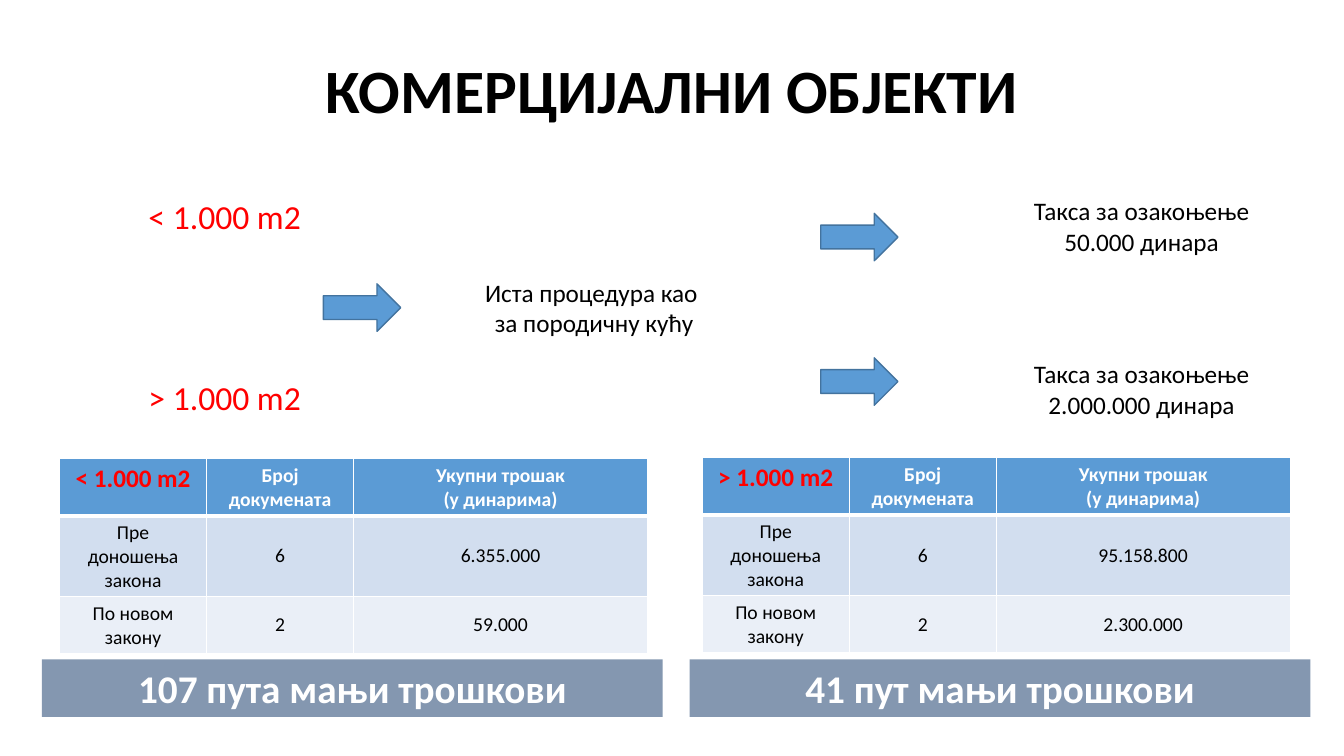
"""Build the slide on legalisation costs of commercial buildings."""
from lxml import etree
from pptx import Presentation
from pptx import util as u
from pptx.dml.color import RGBColor
from pptx.enum import shapes, text
from pptx.oxml.ns import qn

COLUMNS, ROWS = 160, 90
WIDTH, HEIGHT = u.Inches(13.33), u.Inches(7.5)
BLUE, OUTLINE, SLATE = "5B9BD5", "43739E", "8497B0"
BLACK, WHITE, RED = "000000", "FFFFFF", "FF0000"
ROW_FILLS = [BLUE, "D2DEEF", "EAEFF7"]
TABLE_COLUMNS = [17.5, 17.5, 35]
TABLE_ROWS = [6.8, 9.55, 6.8]
CENTER, LEFT = text.PP_ALIGN.CENTER, text.PP_ALIGN.LEFT
MIDDLE, TOP = text.MSO_ANCHOR.MIDDLE, text.MSO_ANCHOR.TOP


def color(hex_code):
    return RGBColor.from_string(hex_code)


def across(columns):
    return round(WIDTH * columns / COLUMNS)


def down(rows):
    return round(HEIGHT * rows / ROWS)


def place(column, row, columns, rows):
    return across(column), down(row), across(columns), down(rows)


def write(frame, lines, size, ink=BLACK, bold=False, align=CENTER):
    for index, line in enumerate(lines):
        paragraph = frame.paragraphs[0] if index == 0 else frame.add_paragraph()
        paragraph.alignment = align
        run = paragraph.add_run()
        run.text = line
        run.font.name = "Calibri"
        run.font.size = u.Pt(size)
        run.font.bold = bold
        run.font.color.rgb = color(ink)


def add_label(slide, area, lines, size, wrap=True, anchor=TOP, **style):
    frame = slide.shapes.add_textbox(*place(*area)).text_frame
    frame.word_wrap = wrap
    frame.vertical_anchor = anchor
    write(frame, lines, size, **style)


def add_block(slide, preset, area, fill):
    block = slide.shapes.add_shape(preset, *place(*area))
    block.shadow.inherit = False
    block.fill.solid()
    block.fill.fore_color.rgb = color(fill)
    return block


def add_arrow(slide, column, row):
    arrow = add_block(slide, shapes.MSO_SHAPE.RIGHT_ARROW, (column, row, 9.2, 5.65), BLUE)
    arrow.line.color.rgb = color(OUTLINE)
    arrow.line.width = u.Pt(1)


def add_saving(slide, column, saving):
    bar = add_block(slide, shapes.MSO_SHAPE.RECTANGLE, (column, 78.5, 73.9, 6.85), SLATE)
    bar.line.fill.background()
    write(bar.text_frame, [saving], 28, WHITE, True)


def set_borders(cell, top, bottom):
    properties = cell._tc.get_or_add_tcPr()
    sides = [("a:lnL", 1), ("a:lnR", 1), ("a:lnT", top), ("a:lnB", bottom)]
    for position, (side, points) in enumerate(sides):
        border = etree.Element(qn(side), w=str(u.Pt(points)))
        fill = etree.SubElement(border, qn("a:solidFill"))
        etree.SubElement(fill, qn("a:srgbClr"), val=WHITE)
        properties.insert(position, border)


def add_costs(slide, column, row, area_class, before, after):
    contents = [
        [[area_class], ["Број докумената"], ["Укупни трошак", "(у динарима)"]],
        [["Пре доношења закона"], ["6"], [before]],
        [["По новом закону"], ["2"], [after]],
    ]
    area = place(column, row, sum(TABLE_COLUMNS), sum(TABLE_ROWS))
    table = slide.shapes.add_table(len(TABLE_ROWS), len(TABLE_COLUMNS), *area).table
    for table_column, columns in zip(table.columns, TABLE_COLUMNS):
        table_column.width = across(columns)
    for r, cells in enumerate(contents):
        table.rows[r].height = down(TABLE_ROWS[r])
        for c, lines in enumerate(cells):
            cell = table.cell(r, c)
            header, corner = r == 0, r == c == 0
            cell.fill.solid()
            cell.fill.fore_color.rgb = color(ROW_FILLS[r])
            cell.vertical_anchor = MIDDLE if r and c else TOP
            ink = RED if corner else WHITE if header else BLACK
            write(cell.text_frame, lines, 18 if corner else 14, ink, header)
            set_borders(cell, 3 if r == 1 else 1, 3 if header else 1)


def main():
    deck = Presentation()
    deck.slide_width, deck.slide_height = WIDTH, HEIGHT
    slide = deck.slides.add_slide(deck.slide_layouts[6])

    add_label(slide, (11, 4.8, 138, 11.6), ["КОМЕРЦИЈАЛНИ ОБЈЕКТИ"], 44,
              anchor=MIDDLE, bold=True)
    for row, area_class in [(22.7, "< 1.000 m2"), (44.3, "> 1.000 m2")]:
        add_label(slide, (16.5, row, 22, 6), [area_class], 24, ink=RED, align=LEFT)
    for column, row in [(38.5, 33.8), (97.7, 25.4), (97.7, 42.6)]:
        add_arrow(slide, column, row)
    add_label(slide, (56.4, 32.4, 28, 8.5),
              ["Иста процедура као", " за породичну кућу"], 18, wrap=False)
    for row, fee in [(22.7, "50.000 динара"), (42.1, "2.000.000 динара")]:
        add_label(slide, (120, row, 31.8, 8.5), ["Такса за озакоњење", fee], 18)

    add_costs(slide, 7.1, 54.6, "< 1.000 m2", "6.355.000", "59.000")
    add_costs(slide, 83.6, 54.5, "> 1.000 m2", "95.158.800", "2.300.000")
    add_saving(slide, 5, "107 пута мањи трошкови")
    add_saving(slide, 82.1, "41 пут мањи трошкови")
    deck.save("out.pptx")


if __name__ == "__main__":
    main()
